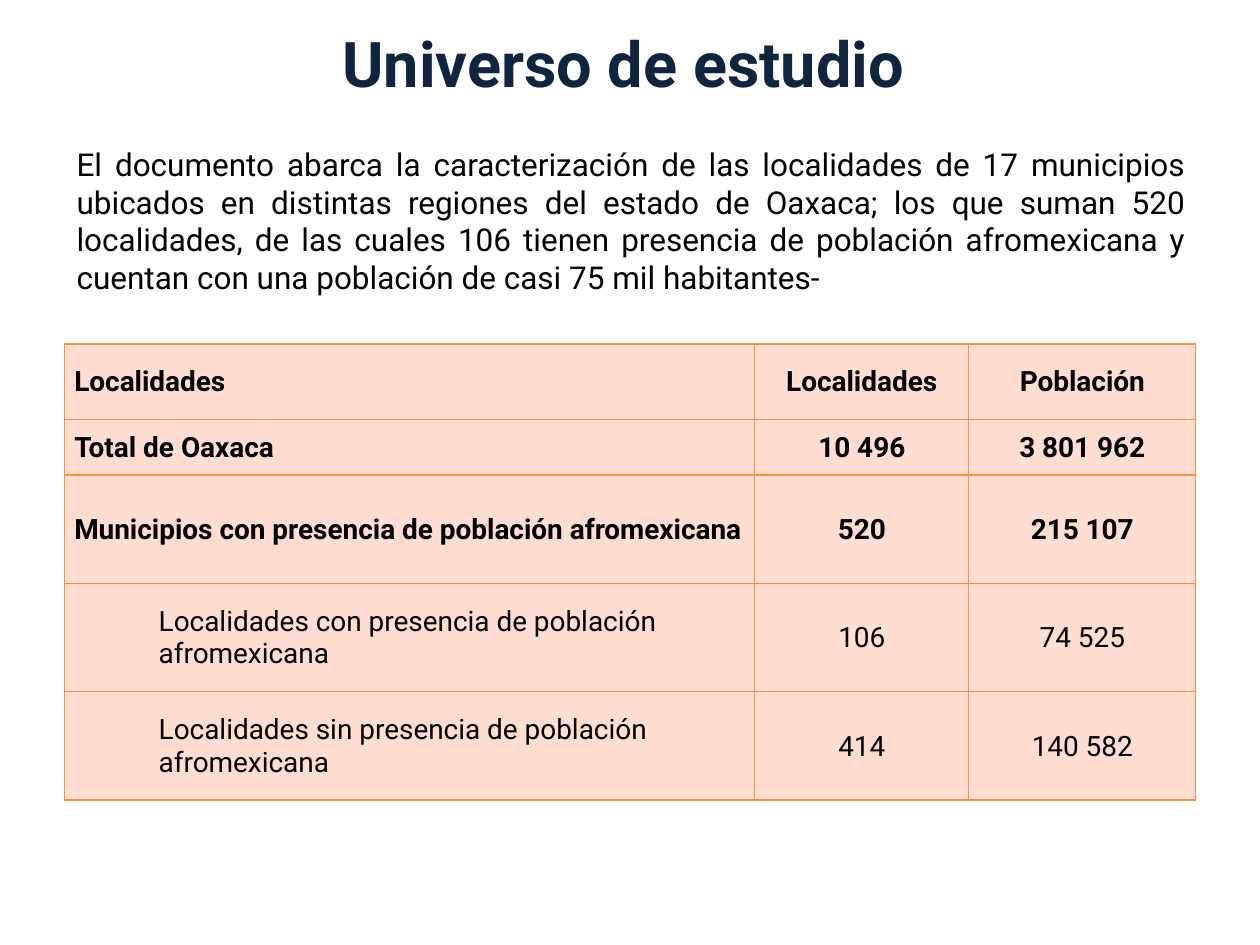
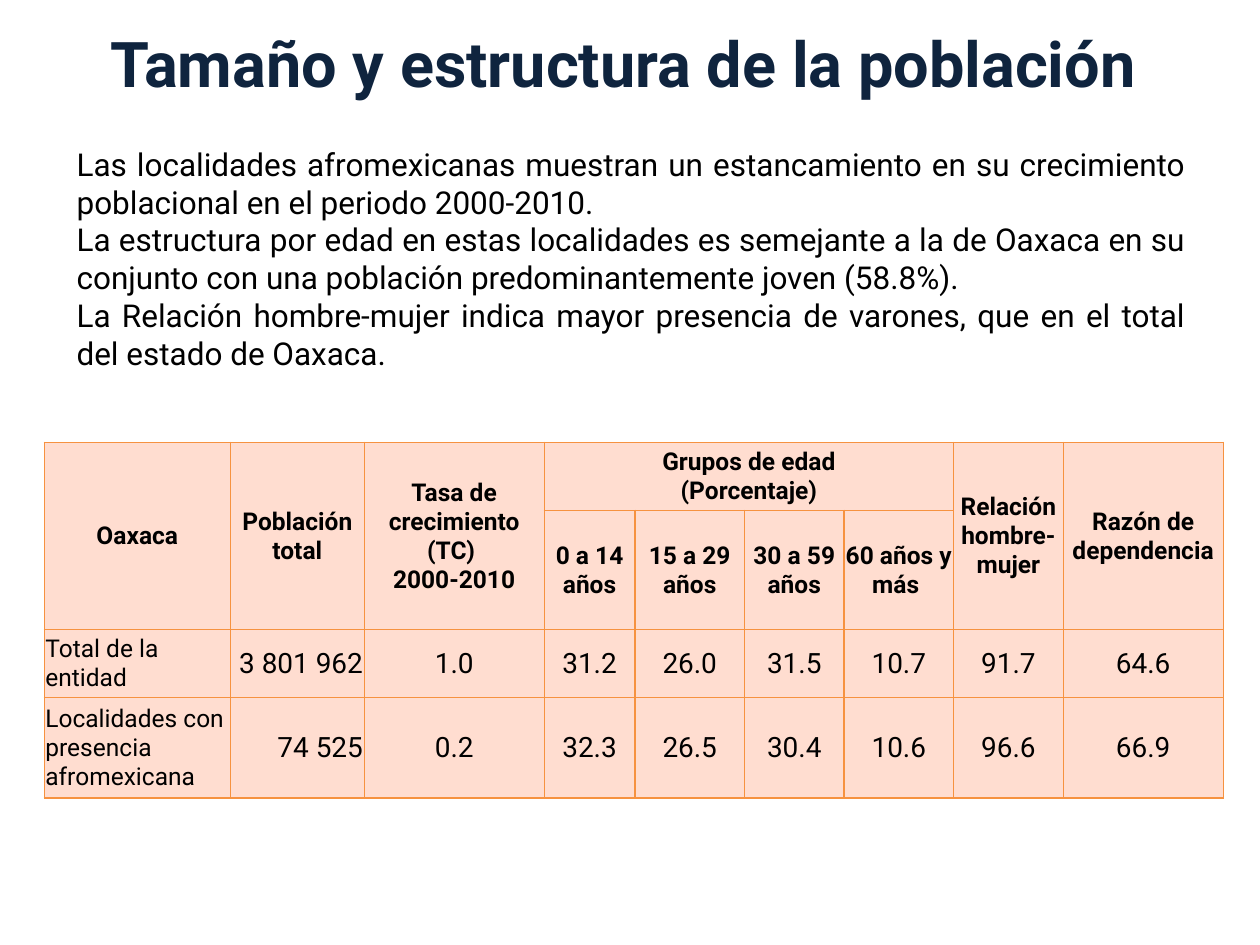
from lxml.etree import SubElement
from pptx import Presentation
from pptx.dml.color import RGBColor
from pptx.enum.text import MSO_ANCHOR, PP_ALIGN
from pptx.oxml.ns import qn
from pptx.util import Inches, Pt

FONT = "Roboto"
COLORS = {"title": "0F243E", "text": "000000", "cell": "FFDDD0", "border": "F69240"}
LEFT, CENTER, RIGHT, JUSTIFY = PP_ALIGN.LEFT, PP_ALIGN.CENTER, PP_ALIGN.RIGHT, PP_ALIGN.JUSTIFY


def style_text(text_frame, text, size, align, bold=False, color="text"):
    text_frame.text = text
    text_frame.word_wrap = True
    for paragraph in text_frame.paragraphs:
        paragraph.alignment = align
        paragraph.font.name = FONT
        paragraph.font.size = Pt(size)
        paragraph.font.bold = bold
        paragraph.font.color.rgb = RGBColor.from_string(COLORS[color])


def add_bordered_table(slide, left, top, widths, heights):
    table = slide.shapes.add_table(
        len(heights), len(widths), Inches(left), Inches(top),
        Inches(sum(widths)), Inches(sum(heights))).table
    table.first_row = table.horz_banding = False
    for column, width in zip(table.columns, widths):
        column.width = Inches(width)
    for row, height in zip(table.rows, heights):
        row.height = Inches(height)
    for cell in table.iter_cells():
        cell.margin_left = cell.margin_right = cell.margin_top = Inches(0.01)
        cell.margin_bottom = 0
        cell.vertical_anchor = MSO_ANCHOR.MIDDLE
        properties = cell._tc.get_or_add_tcPr()
        for side in ("a:lnL", "a:lnR", "a:lnT", "a:lnB"):
            line = SubElement(properties, qn(side), w=str(Pt(0.75)))
            SubElement(SubElement(line, qn("a:solidFill")), qn("a:srgbClr"), val=COLORS["border"])
        cell.fill.solid()
        cell.fill.fore_color.rgb = RGBColor.from_string(COLORS["cell"])
    return table


presentation = Presentation()
presentation.slide_width = Inches(10)
presentation.slide_height = Inches(7.5)

# Titles and introductory text
contents = [
    ("Universo de estudio ", 1.63,
     "El documento abarca la caracterización de las localidades de 17 municipios ubicados en "
     "distintas regiones del estado de Oaxaca; los que suman 520 localidades, de las cuales 106 "
     "tienen presencia de población afromexicana y cuentan con una población de casi 75 mil "
     "habitantes-"),
    ("Tamaño y estructura de la población ", 2.1,
     "Las localidades afromexicanas muestran un estancamiento en su crecimiento poblacional en "
     "el periodo 2000-2010.\n"
     "La estructura por edad en estas localidades es semejante a la de Oaxaca en su conjunto con "
     "una población predominantemente joven (58.8%).\n"
     "La Relación hombre-mujer indica mayor presencia de varones, que en el total del estado "
     "de Oaxaca."),
]
slides = []
for title, body_height, body in contents:
    slide = presentation.slides.add_slide(presentation.slide_layouts[6])
    title_box = slide.shapes.add_textbox(Inches(0.51), 0, Inches(9), Inches(0.99))
    title_box.text_frame.vertical_anchor = MSO_ANCHOR.MIDDLE
    style_text(title_box.text_frame, title, 36, CENTER, True, "title")
    body_box = slide.shapes.add_textbox(Inches(0.51), Inches(1.1), Inches(9), Inches(body_height))
    style_text(body_box.text_frame, body, 18, JUSTIFY)
    slides.append(slide)

# Slide 1: localities and population
locality_rows = [
    ("Localidades", "Localidades", "Población"),
    ("Total de Oaxaca", "10 496", "3 801 962"),
    ("Municipios con presencia de población afromexicana", "520", "215 107"),
    ("Localidades con presencia de población afromexicana", "106", "74 525"),
    ("Localidades sin presencia de población afromexicana", "414", "140 582"),
]
table = add_bordered_table(slides[0], 0.51, 2.73, [5.48, 1.7, 1.8], [0.6, 0.44, 0.86, 0.86, 0.86])
for row, values in enumerate(locality_rows):
    is_main = row < 3
    for column, value in enumerate(values):
        cell = table.cell(row, column)
        style_text(cell.text_frame, value, 16, CENTER if column else LEFT, is_main)
    table.cell(row, 0).margin_left = Inches(0.08 if is_main else 0.75)

# Slide 2: age structure, with None where a merged cell continues
age_rows = [
    ("Oaxaca", "Población total", "Tasa de crecimiento (TC) \v2000-2010",
     "Grupos de edad\n(Porcentaje)", None, None, None, "Relación hombre-mujer",
     "Razón de dependencia"),
    (None, None, None, "0 a 14 años", "15 a 29 años", "30 a 59 años", "60 años y más ", None, None),
    ("Total de la entidad", "3 801 962", "1.0", "31.2", "26.0", "31.5", "10.7", "91.7", "64.6"),
    ("Localidades con presencia afromexicana", "74 525", "0.2", "32.3", "26.5", "30.4", "10.6",
     "96.6", "66.9"),
]
table = add_bordered_table(
    slides[1], 0.35, 3.51, [1.48, 1.06, 1.43, 0.72, 0.87, 0.79, 0.87, 0.87, 1.27],
    [0.54, 0.65, 0.54, 0.8])
for column in (0, 1, 2, 7, 8):
    table.cell(0, column).merge(table.cell(1, column))
table.cell(0, 3).merge(table.cell(0, 6))
for row, values in enumerate(age_rows):
    is_header = row < 2
    for column, value in enumerate(values):
        if value is None:
            continue
        size = 14 if is_header or column == 0 else 16
        align = CENTER if is_header else {0: LEFT, 1: RIGHT}.get(column, CENTER)
        style_text(table.cell(row, column).text_frame, value, size, align, is_header)

presentation.save("out.pptx")
